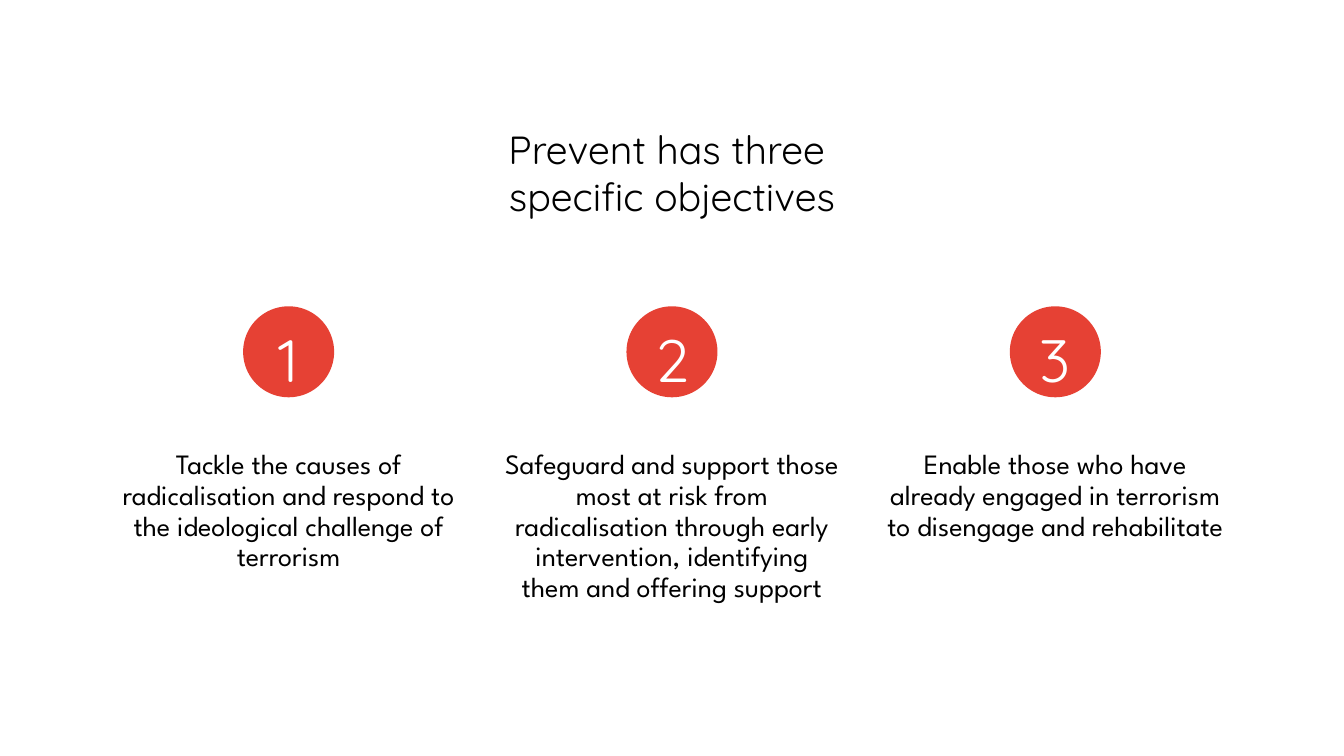
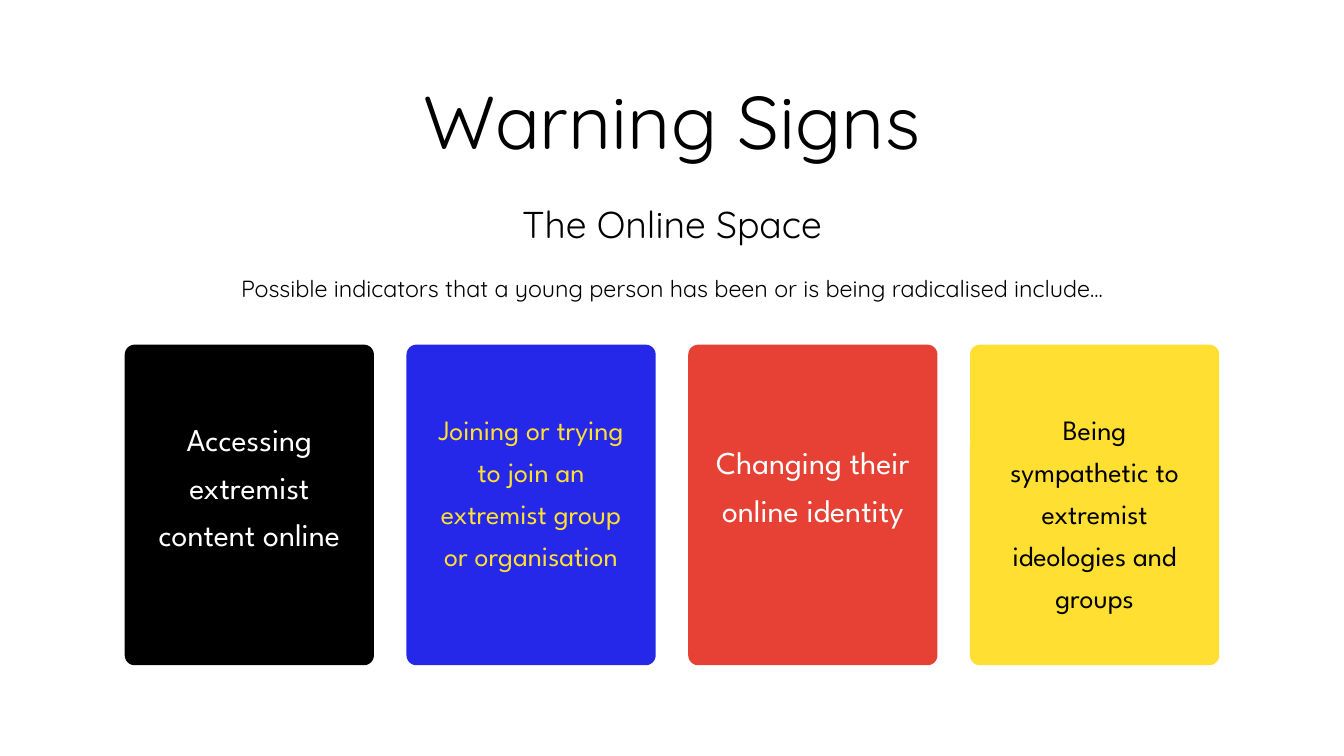
from pptx import Presentation
from pptx.dml.color import RGBColor
from pptx.enum.shapes import MSO_SHAPE
from pptx.enum.text import PP_ALIGN
from pptx.util import Cm, Pt

BLACK = RGBColor(0x00, 0x00, 0x00)
WHITE = RGBColor(0xFF, 0xFF, 0xFF)
RED = RGBColor(0xE6, 0x41, 0x34)
BLUE = RGBColor(0x25, 0x27, 0xE9)
YELLOW = RGBColor(0xFE, 0xDF, 0x32)
HEADING_FONT = "Quicksand"
BODY_FONT = "League Spartan"
SLIDE_W, SLIDE_H = 50.8, 28.58

OBJECTIVES = [
    ("Tackle the causes of radicalisation and respond to the ideological "
     "challenge of terrorism", 5.87),
    ("Safeguard and support those most at risk from radicalisation through "
     "early intervention, identifying them and offering support", 8.2),
    ("Enable those who have already engaged in terrorism to disengage and "
     "rehabilitate", 5.87),
]
SIGNS = [
    ("Accessing extremist content online", BLACK, WHITE, 34, (15.52, 8.38, 6.99)),
    ("Joining or trying to join an extremist group or organisation",
     BLUE, YELLOW, 30, (15.29, 7.39, 7.72)),
    ("Changing their online identity", RED, WHITE, 34, (16.38, 7.39, 5.23)),
    ("Being sympathetic to extremist ideologies and groups",
     YELLOW, BLACK, 30, (15.29, 7.39, 7.72)),
]


def add_slide(prs):
    """Add a blank slide with a white background."""
    s = prs.slides.add_slide(prs.slide_layouts[6])
    s.background.fill.solid()
    s.background.fill.fore_color.rgb = WHITE
    return s


def column_centers(count, pitch):
    """Return the centres of equal columns spread about the slide's middle."""
    return [SLIDE_W / 2 + (i - (count - 1) / 2) * pitch for i in range(count)]


def add_box(s, center, top, width, height):
    """Add an empty text box without margins, centred on a column."""
    tf = s.shapes.add_textbox(Cm(center - width / 2), Cm(top),
                              Cm(width), Cm(height)).text_frame
    tf.word_wrap = True
    tf.margin_left = tf.margin_right = tf.margin_top = tf.margin_bottom = 0
    return tf


def add_text(tf, text, *, size, leading, font=HEADING_FONT, color=BLACK, before=0):
    """Write a centred paragraph, using the first one while it is empty."""
    p = tf.paragraphs[0] if not tf.text else tf.add_paragraph()
    p.alignment = PP_ALIGN.CENTER
    p.line_spacing = Pt(leading)
    if before:
        p.space_before = Pt(before)
    r = p.add_run()
    r.text = text
    r.font.name = font
    r.font.size = Pt(size)
    r.font.color.rgb = color


def add_filled(s, kind, center, top, width, height, color):
    """Add a plain filled shape, centred on a column."""
    sp = s.shapes.add_shape(kind, Cm(center - width / 2), Cm(top),
                            Cm(width), Cm(height))
    sp.shadow.inherit = False
    sp.fill.solid()
    sp.fill.fore_color.rgb = color
    sp.line.fill.background()
    return sp


def add_objective(s, center, number, text, height):
    """Add a numbered circle with its objective below."""
    add_filled(s, MSO_SHAPE.OVAL, center, 11.58, 3.44, 3.44, RED)
    add_text(add_box(s, center, 11.35, 3.45, 3.3), str(number),
             size=64, leading=100.5, color=WHITE)
    add_text(add_box(s, center, 16.99, 12.73, height), text,
             size=30, leading=33, font=BODY_FONT)


def add_sign(s, center, text, fill, color, size, area):
    """Add a rounded card holding one warning sign."""
    card = add_filled(s, MSO_SHAPE.ROUNDED_RECTANGLE, center, 13.03, 9.42, 12.12, fill)
    card.adjustments[0] = 0.04
    top, width, height = area
    add_text(add_box(s, center, top, width, height), text,
             size=size, leading=size * 1.5, font=BODY_FONT, color=color)


def build_objectives(prs):
    """Build the slide of the three objectives."""
    s = add_slide(prs)
    tf = add_box(s, SLIDE_W / 2, 4.75, 30.18, 3.56)
    for line in ("Prevent has three ", "specific objectives"):
        add_text(tf, line, size=42, leading=50.4)
    centers = column_centers(len(OBJECTIVES), 14.49)
    for number, (center, objective) in enumerate(zip(centers, OBJECTIVES), 1):
        add_objective(s, center, number, *objective)


def build_signs(prs):
    """Build the slide of the warning signs."""
    s = add_slide(prs)
    tf = add_box(s, SLIDE_W / 2, 2.82, 39.14, 8.61)
    add_text(tf, "Warning Signs", size=80, leading=96)
    add_text(tf, "The Online Space", size=40, leading=48, before=39.6)
    add_text(tf, "Possible indicators that a young person has been or is being "
             "radicalised include...", size=25, leading=30, before=30)
    for center, sign in zip(column_centers(len(SIGNS), 10.65), SIGNS):
        add_sign(s, center, *sign)


def main():
    """Build and save the presentation."""
    prs = Presentation()
    prs.slide_width, prs.slide_height = Cm(SLIDE_W), Cm(SLIDE_H)
    build_objectives(prs)
    build_signs(prs)
    prs.save("out.pptx")


if __name__ == "__main__":
    main()
